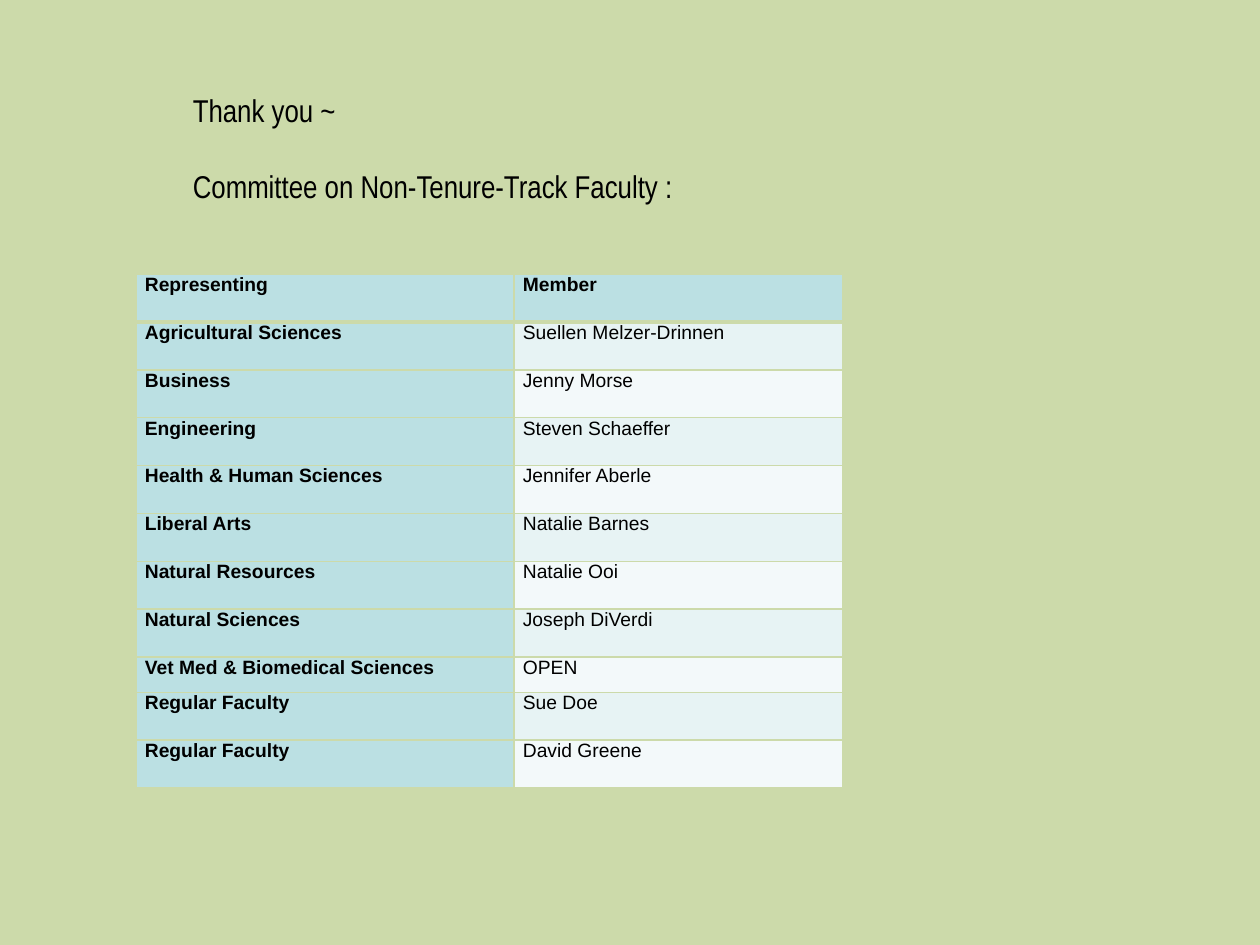
"""Build the thank-you slide listing the Committee on Non-Tenure-Track Faculty."""
from lxml import etree
from pptx import Presentation
from pptx.dml.color import RGBColor
from pptx.enum.text import MSO_ANCHOR, MSO_AUTO_SIZE, PP_ALIGN
from pptx.oxml.ns import qn
from pptx.util import Inches, Pt

TOP = MSO_ANCHOR.TOP
FIT_SHAPE = MSO_AUTO_SIZE.SHAPE_TO_FIT_TEXT
LEFT = PP_ALIGN.LEFT
TITLE_ONLY = 5

SAGE = RGBColor(0xCC, 0xDA, 0xAA)
AQUA = RGBColor(0xBB, 0xE0, 0xE3)
BANDS = (RGBColor(0xE7, 0xF3, 0xF4), RGBColor(0xF3, 0xF9, 0xFA))
BLACK = RGBColor(0x00, 0x00, 0x00)

WIDTH, HEIGHT = Inches(10), Inches(7.5)
COLUMN_WIDTHS = (3, 2.61)
ROW_HEIGHT, OPEN_ROW_HEIGHT = 0.38, 0.28

GREETING = ("Thank you ~", "Committee on Non-Tenure-Track Faculty :")
COMMITTEE = (
    ("Representing", "Member"),
    ("Agricultural Sciences", "Suellen Melzer-Drinnen"),
    ("Business", "Jenny Morse"),
    ("Engineering", "Steven Schaeffer"),
    ("Health & Human Sciences", "Jennifer Aberle"),
    ("Liberal Arts", "Natalie Barnes"),
    ("Natural Resources", "Natalie Ooi"),
    ("Natural Sciences", "Joseph DiVerdi"),
    ("Vet Med & Biomedical Sciences", "OPEN"),
    ("Regular Faculty", "Sue Doe"),
    ("Regular Faculty", "David Greene"),
)


class SlideBuilder:
    """Holds the style and the current slide; places are shares of its size."""

    def __init__(self, slide):
        self.slide = slide
        slide.background.fill.solid()
        slide.background.fill.fore_color.rgb = SAGE

    def format_text(self, paragraph, font_name, size, bold, space_before):
        paragraph.alignment = LEFT
        paragraph.space_before = Pt(space_before)
        for run in paragraph.runs:
            run.font.name = font_name
            run.font.size = Pt(size)
            run.font.bold = bold
            run.font.color.rgb = BLACK

    def title(self, lines, left, top, width, height):
        heading = self.slide.shapes.title
        heading.left, heading.top = int(WIDTH * left), int(HEIGHT * top)
        heading.width, heading.height = int(WIDTH * width), int(HEIGHT * height)
        frame = heading.text_frame
        frame.text = "\n".join(lines)
        frame.word_wrap = True
        frame.auto_size = FIT_SHAPE
        frame.vertical_anchor = TOP
        for index, paragraph in enumerate(frame.paragraphs):
            self.format_text(paragraph, "Arial Narrow", 18, False, 21.7 * index)

    def borders(self, cell, widths):
        properties = cell._tc.get_or_add_tcPr()
        for side, points in zip("LRTB", widths):
            line = etree.SubElement(properties, qn(f"a:ln{side}"), w=str(Pt(points)))
            fill = etree.SubElement(line, qn("a:solidFill"))
            etree.SubElement(fill, qn("a:srgbClr"), val=str(SAGE))

    def cell(self, cell, text, fill, bold, border_widths):
        self.borders(cell, border_widths)
        cell.fill.solid()
        cell.fill.fore_color.rgb = fill
        cell.margin_left = cell.margin_right = Inches(0.07)
        cell.margin_top = cell.margin_bottom = 0
        cell.text_frame.text = text
        self.format_text(cell.text_frame.paragraphs[0], "Arial", 11, bold, 3)

    def table(self, records, left, top):
        heights = [OPEN_ROW_HEIGHT if member == "OPEN" else ROW_HEIGHT
                   for _, member in records]
        roster = self.slide.shapes.add_table(
            len(records), len(COLUMN_WIDTHS), int(WIDTH * left), int(HEIGHT * top),
            Inches(sum(COLUMN_WIDTHS)), Inches(sum(heights))).table
        for column, width in zip(roster.columns, COLUMN_WIDTHS):
            column.width = Inches(width)
        for row_index, (record, height) in enumerate(zip(records, heights)):
            roster.rows[row_index].height = Inches(height)
            is_header = row_index == 0
            border_widths = (1, 1, 3 if row_index == 1 else 1, 3 if is_header else 1)
            for column_index, text in enumerate(record):
                is_label = is_header or column_index == 0
                fill = AQUA if is_label else BANDS[(row_index - 1) % 2]
                self.cell(roster.cell(row_index, column_index), text, fill,
                          is_label, border_widths)


def main():
    presentation = Presentation()
    presentation.slide_width, presentation.slide_height = WIDTH, HEIGHT
    layout = presentation.slide_layouts[TITLE_ONLY]
    builder = SlideBuilder(presentation.slides.add_slide(layout))
    builder.title(GREETING, 0.143, 0.09, 0.5, 0.135)
    builder.table(COMMITTEE, 0.108, 0.29)
    presentation.save("out.pptx")


if __name__ == "__main__":
    main()
